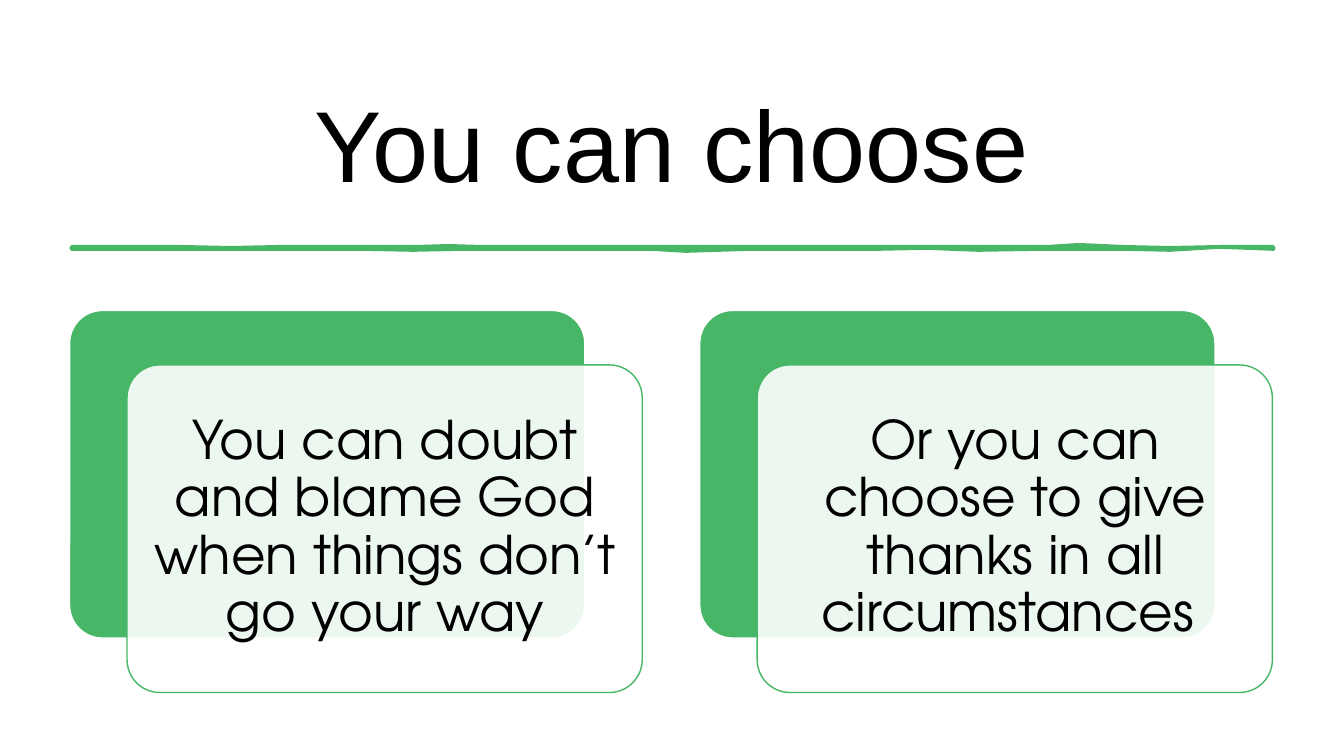
import pptx
import pptx.util
import pptx.dml.color
import pptx.enum.shapes
import pptx.enum.text
import pptx.oxml.ns
import lxml.etree

Inches = pptx.util.Inches
Pt = pptx.util.Pt
Kind = pptx.enum.shapes.MSO_SHAPE

COLORS = {"white": "FFFFFF", "green": "47B666", "black": "000000"}

CARDS = [
    "You can doubt and blame God when things don’t go your way",
    "Or you can choose to give thanks in all circumstances ",
]
CARD_LEFT, CARD_TOP, CARD_STEP = 0.69, 3.08, 6.25
CARD_WIDTH, CARD_HEIGHT = 5.11, 3.25
SHIFT_X, SHIFT_Y = 0.57, 0.54

LOWER = [
    (0.71, 2.47), (1.2, 2.47), (1.96, 2.47), (2.4, 2.47), (2.82, 2.47),
    (3.21, 2.47), (3.6, 2.47), (4.1, 2.48), (4.58, 2.47), (5.33, 2.47),
    (5.72, 2.47), (6.2, 2.47), (6.46, 2.47), (6.8, 2.49), (7.44, 2.47),
    (8.07, 2.47), (8.7, 2.47), (9.2, 2.46), (9.44, 2.47), (9.7, 2.48),
    (10.31, 2.47), (10.7, 2.47), (11.17, 2.47), (11.6, 2.48), (12.1, 2.45),
    (12.63, 2.47),
]
UPPER = [
    (12.63, 2.45), (12.12, 2.45), (11.6, 2.46), (11.14, 2.45), (10.7, 2.43),
    (10.39, 2.45), (10.01, 2.45), (9.26, 2.45), (8.64, 2.45), (8.01, 2.45),
    (7.38, 2.45), (6.76, 2.45), (5.89, 2.45), (5.15, 2.45), (4.76, 2.45),
    (4.45, 2.44), (4.14, 2.45), (3.27, 2.45), (2.77, 2.45), (2.3, 2.46),
    (1.78, 2.45), (1.4, 2.45), (0.71, 2.45),
]


def get_rgb(name):
    return pptx.dml.color.RGBColor.from_string(COLORS[name])


def paint(shape, fill, line=None, width=1):
    shape.shadow.inherit = False
    shape.fill.solid()
    shape.fill.fore_color.rgb = get_rgb(fill)
    if line:
        shape.line.color.rgb = get_rgb(line)
        shape.line.width = Pt(width)
    else:
        shape.line.fill.background()


def set_alpha(shape, percent):
    tag = pptx.oxml.ns.qn
    color = shape.fill._xPr.find(tag("a:solidFill")).find(tag("a:srgbClr"))
    alpha = lxml.etree.SubElement(color, tag("a:alpha"))
    alpha.set("val", str(percent * 1000))


def add_text(slide, text, box, size, font, inset=None, spacing=None):
    shape = slide.shapes.add_textbox(*map(Inches, box))
    frame = shape.text_frame
    frame.word_wrap = True
    frame.vertical_anchor = pptx.enum.text.MSO_ANCHOR.MIDDLE
    if inset is not None:
        frame.margin_left = frame.margin_right = Inches(inset)
        frame.margin_top = frame.margin_bottom = Inches(inset)
    frame.text = text
    para = frame.paragraphs[0]
    para.alignment = pptx.enum.text.PP_ALIGN.CENTER
    if spacing:
        para.line_spacing = spacing
    style = para.runs[0].font
    style.size = Pt(size)
    style.name = font
    style.color.rgb = get_rgb("black")


def add_panel(slide, left, top, fill, line):
    panel = slide.shapes.add_shape(
        Kind.ROUNDED_RECTANGLE, Inches(left), Inches(top),
        Inches(CARD_WIDTH), Inches(CARD_HEIGHT))
    panel.adjustments[0] = 0.1
    paint(panel, fill, line)
    return panel


def add_card(slide, left, text):
    add_panel(slide, left, CARD_TOP, "green", "white")
    left, top = left + SHIFT_X, CARD_TOP + SHIFT_Y
    front = add_panel(slide, left, top, "white", "green")
    set_alpha(front, 90)
    box = (left + 0.1, top + 0.09, CARD_WIDTH - 0.19, CARD_HEIGHT - 0.19)
    add_text(slide, text, box, 38, "TeX Gyre Adventor", 0.16, 0.9)


def add_stroke(slide):
    points = [(Inches(x), Inches(y)) for x, y in LOWER + UPPER]
    maker = slide.shapes.build_freeform(*points[0])
    maker.add_line_segments(points[1:], close=True)
    paint(maker.convert_to_shape(), "green", "green", 2.75)


def main():
    deck = pptx.Presentation()
    deck.slide_width, deck.slide_height = Inches(13.33), Inches(7.5)
    slide = deck.slides.add_slide(deck.slide_layouts[6])
    back = slide.shapes.add_shape(
        Kind.RECTANGLE, 0, 0, deck.slide_width, deck.slide_height)
    paint(back, "white")
    add_text(slide, "You can choose", (0.69, 0.69, 11.94, 1.44), 72, "Arial")
    add_stroke(slide)
    for index, text in enumerate(CARDS):
        add_card(slide, CARD_LEFT + index * CARD_STEP, text)
    deck.save("out.pptx")


if __name__ == "__main__":
    main()
